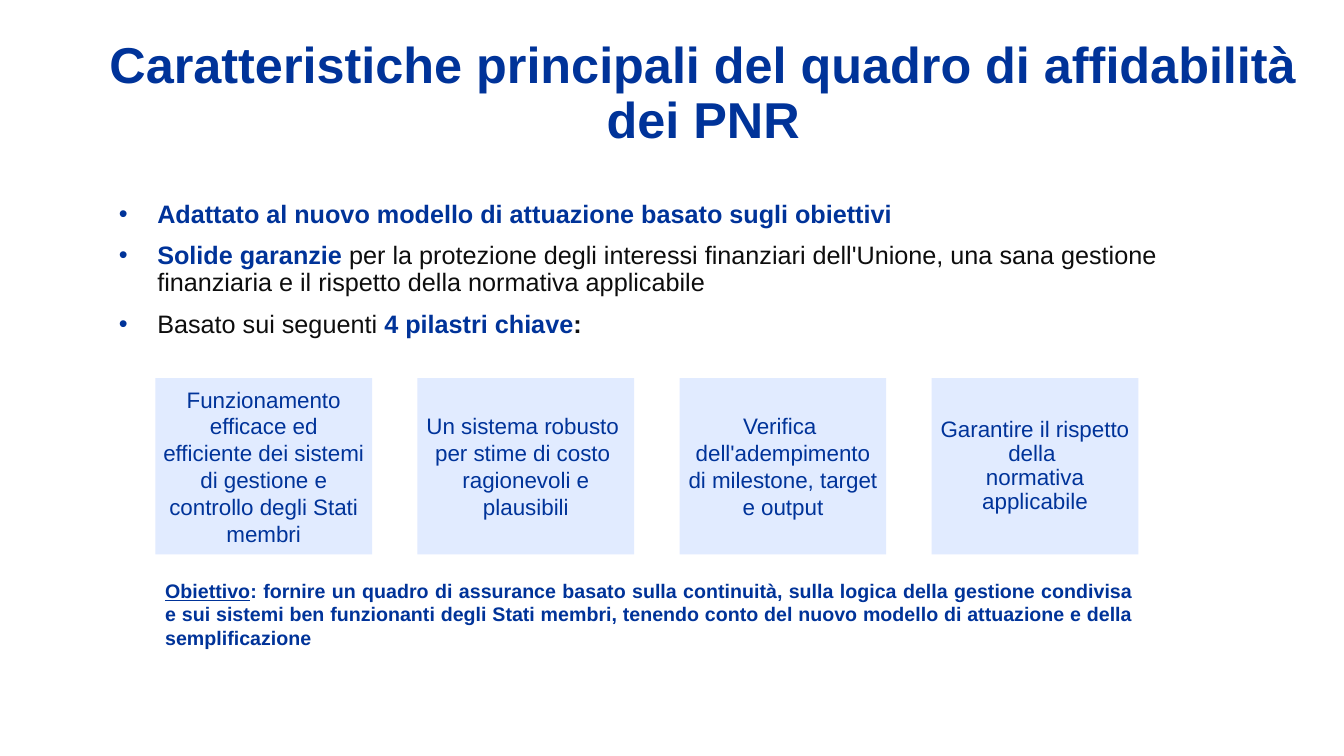
from pptx import Presentation
from pptx.dml.color import RGBColor
from pptx.enum import shapes, text
from pptx.oxml import parse_xml
from pptx.oxml.ns import nsdecls
from pptx.util import Inches, Pt

BLUE, BLACK, PALE = "003399", "0D0D0D", "E1EBFF"

TITLE = "Caratteristiche principali del quadro di affidabilità dei PNR"
# Each run: text, colour, bold
FEATURES = [
    [("Adattato al nuovo modello di attuazione basato sugli obiettivi", BLUE, True)],
    [("Solide garanzie ", BLUE, True),
     ("per la protezione degli interessi finanziari dell'Unione, una sana gestione "
      "finanziaria e il rispetto della normativa applicabile", BLACK, False)],
    [("Basato sui seguenti ", BLACK, False),
     ("4 pilastri chiave", BLUE, True),
     (":", BLACK, True)],
]
# Each pillar: text (\v breaks the line), width, line spacing
PILLARS = [
    ("Funzionamento efficace ed efficiente dei sistemi di gestione e controllo "
     "degli Stati membri", 2.15, 1.0),
    ("Un sistema robusto \vper stime di costo \vragionevoli e plausibili", 2.15, 1.0),
    ("Verifica \vdell'adempimento di milestone, target e output", 2.05, 1.0),
    ("Garantire il rispetto della \vnormativa applicabile", 2.05, 0.9),
]
GOAL_LABEL = "Obiettivo"
GOAL = (": fornire un quadro di assurance basato sulla continuità, sulla logica della "
        "gestione condivisa e sui sistemi ben funzionanti degli Stati membri, tenendo "
        "conto del nuovo modello di attuazione e della semplificazione")

PILLAR_LEFT, PILLAR_TOP, PILLAR_HEIGHT, PILLAR_GAP = 1.54, 3.75, 1.75, 0.45


def rgb(hex_colour):
    return RGBColor.from_string(hex_colour)


def style(font, size, colour=BLUE, bold=False):
    font.name, font.size, font.bold = "Arial", Pt(size), bold
    font.color.rgb = rgb(colour)


def set_frame(frame, anchor, inset=None):
    frame.word_wrap = True
    frame.vertical_anchor = anchor
    if inset is not None:
        frame.margin_left = frame.margin_right = Inches(inset)
        frame.margin_top = frame.margin_bottom = Inches(inset)


def add_text_box(slide, left, top, width, height, anchor, inset=None):
    box = slide.shapes.add_textbox(Inches(left), Inches(top), Inches(width), Inches(height))
    set_frame(box.text_frame, anchor, inset)
    return box.text_frame


def add_bullet(paragraph):
    properties = paragraph._p.get_or_add_pPr()
    properties.set("marL", str(Inches(0.38)))
    properties.set("indent", str(-Inches(0.38)))
    for xml in (f'<a:buClr {nsdecls("a")}><a:srgbClr val="{BLUE}"/></a:buClr>',
                f'<a:buFont {nsdecls("a")} typeface="Arial"/>',
                f'<a:buChar {nsdecls("a")} char="•"/>'):
        properties.append(parse_xml(xml))


def add_title(slide):
    frame = add_text_box(slide, 0.92, 0.4, 12.11, 1.08, text.MSO_ANCHOR.MIDDLE)
    heading = frame.paragraphs[0]
    heading.text = TITLE
    heading.alignment = text.PP_ALIGN.CENTER
    heading.line_spacing = 0.9
    style(heading.font, 36, bold=True)


def add_features(slide):
    frame = add_text_box(slide, 1.02, 1.84, 11.42, 1.66, text.MSO_ANCHOR.TOP, 0.16)
    for index, feature in enumerate(FEATURES):
        paragraph = frame.add_paragraph() if index else frame.paragraphs[0]
        add_bullet(paragraph)
        paragraph.line_spacing = 0.9
        if index:
            paragraph.space_before = Pt(10)
        for words, colour, bold in feature:
            run = paragraph.add_run()
            run.text = words
            style(run.font, 18, colour, bold)


def add_pillars(slide):
    left = PILLAR_LEFT
    for words, width, spacing in PILLARS:
        pillar = slide.shapes.add_shape(
            shapes.MSO_SHAPE.RECTANGLE, Inches(left), Inches(PILLAR_TOP),
            Inches(width), Inches(PILLAR_HEIGHT))
        pillar.shadow.inherit = False
        pillar.fill.solid()
        pillar.fill.fore_color.rgb = rgb(PALE)
        pillar.line.fill.background()
        set_frame(pillar.text_frame, text.MSO_ANCHOR.MIDDLE, 0.07)
        paragraph = pillar.text_frame.paragraphs[0]
        paragraph.text = words
        paragraph.alignment = text.PP_ALIGN.CENTER
        paragraph.line_spacing = spacing
        style(paragraph.font, 16)
        left += width + PILLAR_GAP


def add_goal(slide):
    frame = add_text_box(slide, 1.54, 5.92, 9.8, 0.57, text.MSO_ANCHOR.BOTTOM)
    paragraph = frame.paragraphs[0]
    paragraph.alignment = text.PP_ALIGN.JUSTIFY
    style(paragraph.font, 14, bold=True)
    label = paragraph.add_run()
    label.text = GOAL_LABEL
    label.font.underline = True
    paragraph.add_run().text = GOAL


def main():
    deck = Presentation()
    deck.slide_width, deck.slide_height = Inches(13.33), Inches(7.5)
    slide = deck.slides.add_slide(deck.slide_layouts[6])
    add_title(slide)
    add_features(slide)
    add_pillars(slide)
    add_goal(slide)
    deck.save("out.pptx")


if __name__ == "__main__":
    main()
